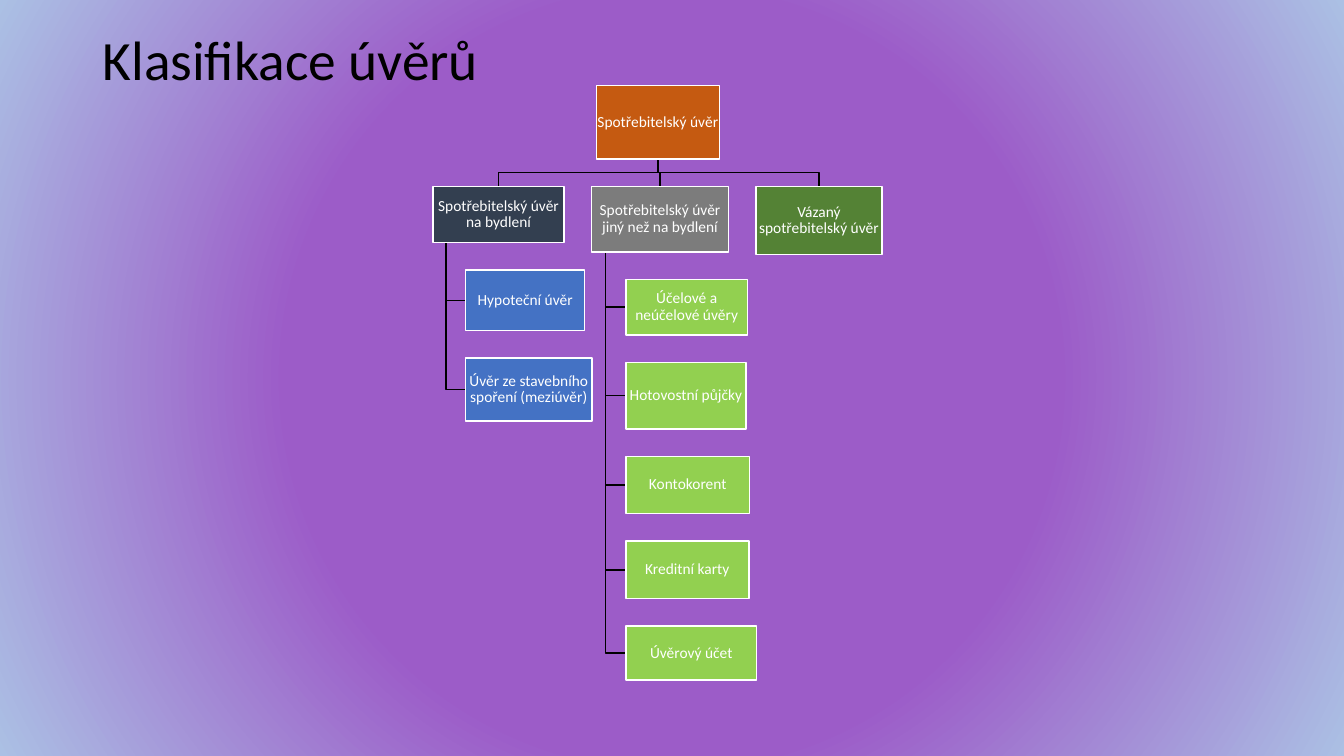
from dataclasses import dataclass
from pptx import Presentation
from pptx.dml.color import RGBColor
from pptx.enum.shapes import MSO_SHAPE as Preset
from pptx.enum.text import MSO_ANCHOR as Anchor, MSO_AUTO_SIZE as AutoSize, PP_ALIGN as Align
from pptx.oxml import parse_xml
from pptx.oxml.ns import nsdecls
from pptx.util import Cm, Pt


@dataclass(frozen=True)
class Theme:
    font: str = "Calibri"
    title_size: float = 39.6
    box_size: float = 11
    line_width: float = 1
    line_spacing: float = 0.9
    inset: float = 0.02
    ink: str = "000000"
    paper: str = "FFFFFF"
    center: str = "9C5CC8"
    edge: str = "ABC0E4"
    root: str = "C55A11"
    housing: str = "333F50"
    housing_leaf: str = "4472C4"
    other: str = "7C7C7C"
    other_leaf: str = "92D050"
    tied: str = "548235"


@dataclass(frozen=True)
class Box:
    text: str
    fill: str
    left: float
    top: float
    width: float
    height: float

    @property
    def center(self):
        return self.left + self.width / 2

    @property
    def middle(self):
        return self.top + self.height / 2

    @property
    def bottom(self):
        return self.top + self.height


class SlideBuilder:
    """Draws the elements of one slide in one theme."""

    def __init__(self, slide, theme):
        self.slide = slide
        self.theme = theme

    def background(self):
        stops = "".join(
            f'<a:gs pos="{position}"><a:srgbClr val="{color}"/></a:gs>'
            for position, color in ((50000, self.theme.center), (100000, self.theme.edge)))
        self.slide.element.cSld.insert(0, parse_xml(
            f'<p:bg {nsdecls("p", "a")}><p:bgPr><a:gradFill rotWithShape="1">'
            f'<a:gsLst>{stops}</a:gsLst><a:path path="circle">'
            '<a:fillToRect l="50000" t="50000" r="50000" b="50000"/></a:path>'
            '</a:gradFill><a:effectLst/></p:bgPr></p:bg>'))

    def set_text(self, shape, text, size, color, align, frame_format):
        frame = shape.text_frame
        for name, value in frame_format.items():
            setattr(frame, name, value)
        paragraph = frame.paragraphs[0]
        paragraph.text = text
        paragraph.alignment = align
        paragraph.line_spacing = self.theme.line_spacing
        font_format = {"name": self.theme.font, "size": Pt(size)}
        for name, value in font_format.items():
            setattr(paragraph.font, name, value)
        paragraph.font.color.rgb = RGBColor.from_string(color)

    def outline(self, shape, color):
        shape.shadow.inherit = False
        shape.line.color.rgb = RGBColor.from_string(color)
        shape.line.width = Pt(self.theme.line_width)

    def title(self, text, left, top, width, height):
        shape = self.slide.shapes.title
        place = {"left": left, "top": top, "width": width, "height": height}
        for name, value in place.items():
            setattr(shape, name, Cm(value))
        self.set_text(shape, text, self.theme.title_size, self.theme.ink, Align.LEFT,
                      {"word_wrap": True, "auto_size": AutoSize.NONE,
                       "vertical_anchor": Anchor.MIDDLE})

    def box(self, box):
        shape = self.slide.shapes.add_shape(
            Preset.RECTANGLE, Cm(box.left), Cm(box.top), Cm(box.width), Cm(box.height))
        shape.fill.solid()
        shape.fill.fore_color.rgb = RGBColor.from_string(box.fill)
        self.outline(shape, self.theme.paper)
        inset = Cm(self.theme.inset)
        sides = ("margin_left", "margin_top", "margin_right", "margin_bottom")
        self.set_text(shape, box.text, self.theme.box_size, self.theme.paper, Align.CENTER,
                      {"word_wrap": True, "vertical_anchor": Anchor.MIDDLE,
                       **dict.fromkeys(sides, inset)})

    def elbow(self, *points):
        start, *others = [(Cm(x), Cm(y)) for x, y in points]
        builder = self.slide.shapes.build_freeform(*start)
        builder.add_line_segments(others, close=False)
        shape = builder.convert_to_shape()
        shape.fill.background()
        self.outline(shape, self.theme.ink)


def main():
    presentation = Presentation()
    presentation.slide_width, presentation.slide_height = Cm(33.87), Cm(19.05)
    slide = presentation.slides.add_slide(presentation.slide_layouts[5])
    theme = Theme()
    builder = SlideBuilder(slide, theme)
    builder.background()
    builder.title("Klasifikace úvěrů", 2.33, 1.01, 29.21, 1.14)

    gap = 0.69
    root = Box("Spotřebitelský úvěr", theme.root, 15.03, 2.15, 3.1, 1.86)
    branches = [
        ("Spotřebitelský úvěr na bydlení", theme.housing, 3.31, 1.41, theme.housing_leaf, [
            ("Hypoteční úvěr", 3, 1.53),
            ("Úvěr ze stavebního spoření (meziúvěr)", 3.18, 1.59)]),
        ("Spotřebitelský úvěr jiný než na bydlení", theme.other, 3.45, 1.65, theme.other_leaf, [
            ("Účelové a neúčelové úvěry", 3.07, 1.4),
            ("Hotovostní půjčky", 3.03, 1.68),
            ("Kontokorent", 3.12, 1.44),
            ("Kreditní karty", 3.1, 1.46),
            ("Úvěrový účet", 3.3, 1.36)]),
        ("Vázaný spotřebitelský úvěr", theme.tied, 3.18, 1.71, theme.tied, []),
    ]

    boxes = [root]
    left, fork = 10.91, root.bottom + gap / 2
    for text, fill, width, height, leaf_fill, leaves in branches:
        branch = Box(text, fill, left, root.bottom + gap, width, height)
        boxes.append(branch)
        builder.elbow((root.center, root.bottom), (root.center, fork),
                      (branch.center, fork), (branch.center, branch.top))
        trunk, leaf_left = left + width * 0.1, left + width * 0.25
        top = branch.bottom + gap
        for leaf_text, leaf_width, leaf_height in leaves:
            leaf = Box(leaf_text, leaf_fill, leaf_left, top, leaf_width, leaf_height)
            boxes.append(leaf)
            builder.elbow((trunk, branch.bottom), (trunk, leaf.middle),
                          (leaf.left, leaf.middle))
            top = leaf.bottom + gap
        left += width + gap

    for box in boxes:
        builder.box(box)
    presentation.save("out.pptx")


if __name__ == "__main__":
    main()
